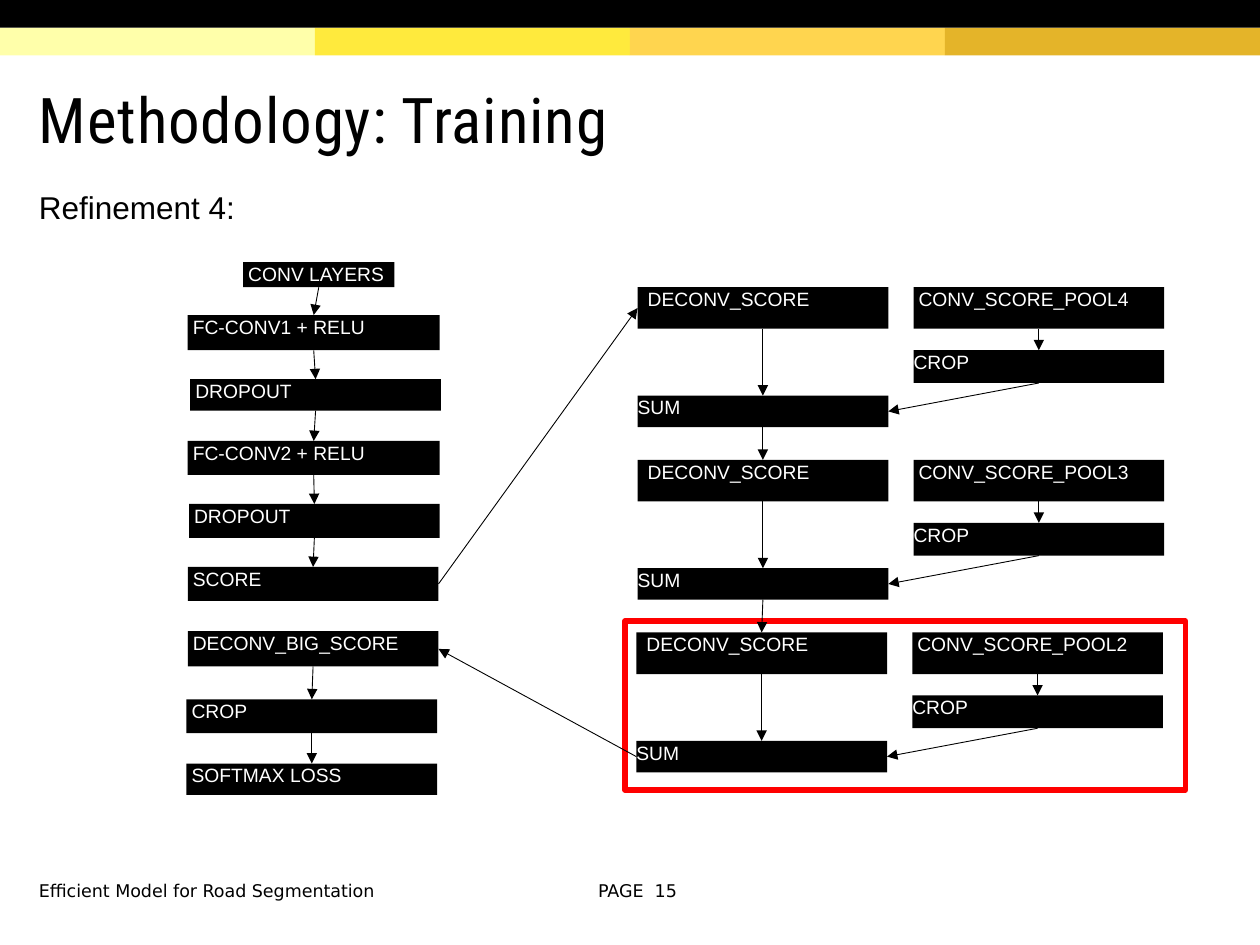
"""Build the training methodology slide with its layer diagram."""
from itertools import pairwise

from lxml.etree import SubElement
from pptx import Presentation
from pptx.dml.color import RGBColor
from pptx.enum.shapes import MSO_CONNECTOR, MSO_SHAPE
from pptx.enum.text import MSO_ANCHOR, PP_ALIGN
from pptx.oxml.ns import qn
from pptx.util import Inches, Pt

BLACK = RGBColor(0x00, 0x00, 0x00)
WHITE = RGBColor(0xFF, 0xFF, 0xFF)
RED = RGBColor(0xFF, 0x00, 0x00)
BANDS = (
    RGBColor(0xFF, 0xFF, 0xAA),
    RGBColor(0xFF, 0xEA, 0x3D),
    RGBColor(0xFF, 0xD5, 0x4F),
    RGBColor(0xE4, 0xB4, 0x29),
)
TOP, LEFT, BOTTOM, RIGHT = range(4)
BOX_WIDTH = 1.99
SPACE = 0.04
LAYERS = (
    ("CONV LAYERS", 1.93, 2.08, 1.2, 0.2),
    ("FC-CONV1 + RELU", 1.49, 2.5, 2, 0.28),
    ("DROPOUT", 1.51, 3.01, BOX_WIDTH, 0.25),
    ("FC-CONV2 + RELU", 1.49, 3.5, 2, 0.27),
    ("DROPOUT", 1.5, 4, BOX_WIDTH, 0.27),
    ("SCORE", 1.49, 4.5, BOX_WIDTH, 0.27),
)
OUTPUT_LAYERS = (
    ("DECONV_BIG_SCORE", 1.49, 5.01, BOX_WIDTH, 0.28),
    ("CROP", 1.48, 5.55, BOX_WIDTH, 0.27),
    ("SOFTMAX LOSS", 1.48, 6.06, BOX_WIDTH, 0.25),
)
STAGES = ((4, 5.06, 2.28), (3, 5.06, 3.65), (2, 5.05, 5.02))


def write(sp, text, size=11, font="Arial", color=WHITE, align=PP_ALIGN.LEFT,
          anchor=MSO_ANCHOR.TOP, insets=(0, 0, 0, 0), wrap=True,
          line_spacing=None, tracking=None):
    """Put one formatted paragraph into a shape."""
    tf = sp.text_frame
    tf.word_wrap = wrap
    tf.vertical_anchor = anchor
    tf.margin_left, tf.margin_top, tf.margin_right, tf.margin_bottom = map(Inches, insets)
    p = tf.paragraphs[0]
    p.alignment = align
    if line_spacing:
        p.line_spacing = line_spacing
    r = p.add_run()
    r.text = text
    r.font.size = Pt(size)
    r.font.name = font
    r.font.color.rgb = color
    if tracking:
        r.font._element.set("spc", str(tracking))


def add_text(s, text, x, y, w, h, **fmt):
    """Add a text box."""
    sp = s.shapes.add_textbox(Inches(x), Inches(y), Inches(w), Inches(h))
    write(sp, text, **{"color": BLACK, "insets": (0.1, 0.05, 0.1, 0.05), **fmt})


def add_rect(s, x, y, w, h, fill=None, line=None):
    """Add a rectangle with an optional fill and outline."""
    sp = s.shapes.add_shape(MSO_SHAPE.RECTANGLE, Inches(x), Inches(y), Inches(w), Inches(h))
    sp.shadow.inherit = False
    if fill is None:
        sp.fill.background()
    else:
        sp.fill.solid()
        sp.fill.fore_color.rgb = fill
    if line is None:
        sp.line.fill.background()
    else:
        sp.line.color.rgb = line
        sp.line.width = Pt(3)
    return sp


def add_layer(s, text, x, y, w, h, indent=SPACE):
    """Add a black network layer box."""
    sp = add_rect(s, x, y, w, h, fill=BLACK)
    write(sp, text, insets=(indent, 0, 0, 0))
    return sp


def add_arrow(s, start, end, start_side=BOTTOM, end_side=TOP):
    """Join two boxes with a thin arrow."""
    cxn = s.shapes.add_connector(MSO_CONNECTOR.STRAIGHT, 0, 0, 0, 0)
    cxn.begin_connect(start, start_side)
    cxn.end_connect(end, end_side)
    cxn.line.color.rgb = BLACK
    cxn.line.width = Pt(0.5)
    SubElement(cxn.line._get_or_add_ln(), qn("a:tailEnd"), type="triangle")
    SubElement(cxn._element.spPr, qn("a:effectLst"))


def add_chain(s, layers):
    """Add a column of layers joined from top to bottom."""
    boxes = [add_layer(s, *layer) for layer in layers]
    for upper, lower in pairwise(boxes):
        add_arrow(s, upper, lower)
    return boxes


def add_stage(s, pool, x, y):
    """Add one deconvolution stage and return its first and last boxes."""
    pool_x = x + 2.19
    total = add_layer(s, "SUM", x, y + 0.86, BOX_WIDTH, 0.25, indent=0)
    crop = add_layer(s, "CROP", pool_x, y + 0.5, BOX_WIDTH, 0.26, indent=0)
    score = add_layer(s, f"CONV_SCORE_POOL{pool}", pool_x, y, BOX_WIDTH, 0.33)
    deconv = add_layer(s, "DECONV_SCORE", x, y, BOX_WIDTH, 0.33, indent=2 * SPACE)
    add_arrow(s, deconv, total)
    add_arrow(s, crop, total, end_side=RIGHT)
    add_arrow(s, score, crop)
    return deconv, total


def add_header(s):
    """Add the black strip and the four colour bands."""
    for i, color in enumerate(BANDS):
        add_rect(s, 2.5 * i, 0.22, 2.5, 0.22, fill=color)
    add_rect(s, 0, 0, 10, 0.22, fill=BLACK)


def add_diagram(s):
    """Add the layer columns, the stages and the arrows between them."""
    score = add_chain(s, LAYERS)[-1]
    big_score = add_chain(s, OUTPUT_LAYERS)[0]
    add_rect(s, 4.96, 4.93, 4.45, 1.34, line=RED)
    stages = [add_stage(s, *stage) for stage in STAGES]
    for (_, total), (deconv, _) in pairwise(stages):
        add_arrow(s, total, deconv)
    add_arrow(s, score, stages[0][0], RIGHT, LEFT)
    add_arrow(s, stages[-1][1], big_score, LEFT, RIGHT)


def main():
    """Build and save the slide."""
    prs = Presentation()
    prs.slide_width, prs.slide_height = Inches(10), Inches(7.5)
    s = prs.slides.add_slide(prs.slide_layouts[6])
    add_header(s)
    add_text(s, "Methodology: Training", 0.21, 0.47, 9.49, 0.98, size=36,
             font="Roboto Condensed", anchor=MSO_ANCHOR.MIDDLE,
             insets=(0.1, 0.1, 0.1, 0.05), line_spacing=0.85, tracking=50)
    add_text(s, "Refinement 4:", 0.21, 1.44, 1.77, 0.4, size=18, wrap=False)
    add_diagram(s)
    footer = {"size": 10, "font": "DejaVu Sans", "anchor": MSO_ANCHOR.MIDDLE}
    add_text(s, "Efficient Model for Road Segmentation", 0.21, 6.93, 4.29, 0.27, **footer)
    add_text(s, "PAGE  15", 4.58, 6.93, 0.96, 0.27, align=PP_ALIGN.CENTER, **footer)
    prs.save("out.pptx")


if __name__ == "__main__":
    main()
